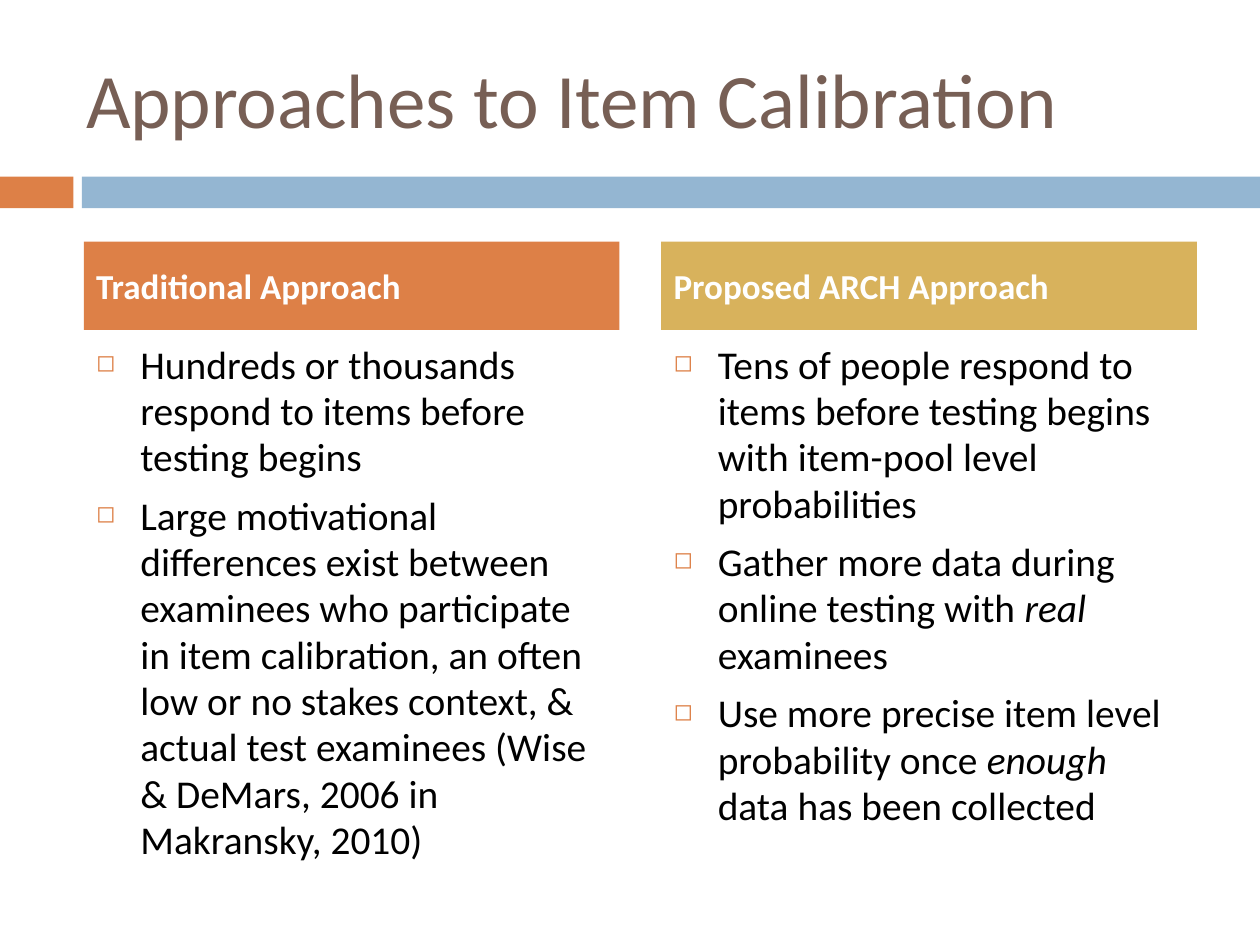
from lxml import etree
from pptx import Presentation
from pptx.dml.color import RGBColor
from pptx.enum.shapes import MSO_SHAPE
from pptx.enum.text import MSO_ANCHOR, MSO_AUTO_SIZE, PP_ALIGN
from pptx.oxml.ns import qn
from pptx.util import Cm, Pt

RECTANGLE = MSO_SHAPE.RECTANGLE
TOP, MIDDLE = MSO_ANCHOR.TOP, MSO_ANCHOR.MIDDLE
LEFT = PP_ALIGN.LEFT
NO_AUTOFIT = MSO_AUTO_SIZE.NONE

ORANGE = RGBColor(0xDD, 0x80, 0x47)
BLUE = RGBColor(0x94, 0xB6, 0xD2)
GOLD = RGBColor(0xD8, 0xB2, 0x5C)
BROWN = RGBColor(0x77, 0x5F, 0x55)
BLACK = RGBColor(0, 0, 0)
WHITE = RGBColor(0xFF, 0xFF, 0xFF)

TITLE_ONLY_LAYOUT = 5
COLUMN_LEFT, COLUMN_STEP, COLUMN_WIDTH = 1.69, 11.64, 10.8

COLUMNS = [
    ("Traditional Approach", ORANGE, [
        ["Hundreds or thousands respond to items before testing begins"],
        ["Large motivational differences exist between examinees who participate "
         "in item calibration, an often low or no stakes context, & actual test "
         "examinees (Wise & DeMars, 2006 in Makransky, 2010)"],
    ]),
    ("Proposed ARCH Approach", GOLD, [
        ["Tens of people respond to items before testing begins with item-pool "
         "level probabilities"],
        ["Gather more data during online testing with ", "real", " examinees"],
        ["Use more precise item level probability once ", "enough",
         " data has been collected"],
    ]),
]


def add_text(paragraph, parts, *, font, size, color, bold=False, space_before=0,
             line_spacing=1.0):
    """Write the parts as runs; every second part is italic."""
    paragraph.alignment = LEFT
    paragraph.space_before = Pt(space_before)
    paragraph.line_spacing = line_spacing
    for index, part in enumerate(parts):
        run = paragraph.add_run()
        run.text = part
        run.font.name = font
        run.font.size = Pt(size)
        run.font.color.rgb = color
        run.font.bold = bold
        run.font.italic = index % 2 == 1


def add_bullet(paragraph, color, indent):
    properties = paragraph._p.get_or_add_pPr()
    properties.set("marL", str(indent))
    properties.set("indent", str(-indent))
    bullet_color = etree.SubElement(properties, qn("a:buClr"))
    etree.SubElement(bullet_color, qn("a:srgbClr"), val=str(color))
    etree.SubElement(properties, qn("a:buSzPct"), val="60000")
    etree.SubElement(properties, qn("a:buChar"), char="◻")


class SlideBuilder:
    """Holds the shared style and the slide being filled."""

    font = "Calibri"
    space_before = 7
    bullet_indent = Cm(0.89)

    def __init__(self, slide):
        self.slide = slide

    def prepare_frame(self, shape, anchor):
        frame = shape.text_frame
        frame.word_wrap = True
        frame.auto_size = NO_AUTOFIT
        frame.vertical_anchor = anchor
        return frame

    def title(self, text, left, top, width, height):
        shape = self.slide.shapes.title
        shape.left, shape.top = Cm(left), Cm(top)
        shape.width, shape.height = Cm(width), Cm(height)
        frame = self.prepare_frame(shape, MIDDLE)
        add_text(frame.paragraphs[0], [text], font=self.font, size=44, color=BROWN)

    def bar(self, color, left, top, width, height):
        shape = self.slide.shapes.add_shape(
            RECTANGLE, Cm(left), Cm(top), Cm(width), Cm(height))
        shape.shadow.inherit = False
        shape.fill.solid()
        shape.fill.fore_color.rgb = color
        shape.line.fill.background()
        return shape

    def heading(self, text, color, left, top, width, height):
        frame = self.prepare_frame(self.bar(color, left, top, width, height), MIDDLE)
        add_text(frame.paragraphs[0], [text], font=self.font, size=20, color=WHITE,
                 bold=True, space_before=self.space_before)

    def bullet_list(self, items, left, top, width, height):
        shape = self.slide.shapes.add_textbox(
            Cm(left), Cm(top), Cm(width), Cm(height))
        frame = self.prepare_frame(shape, TOP)
        for index, parts in enumerate(items):
            paragraph = frame.add_paragraph() if index else frame.paragraphs[0]
            add_text(paragraph, parts, font=self.font, size=22.5, color=BLACK,
                     space_before=self.space_before, line_spacing=0.98)
            add_bullet(paragraph, ORANGE, self.bullet_indent)


def main():
    presentation = Presentation()
    presentation.slide_width, presentation.slide_height = Cm(25.4), Cm(19.05)
    layout = presentation.slide_layouts[TITLE_ONLY_LAYOUT]
    builder = SlideBuilder(presentation.slides.add_slide(layout))

    builder.bar(ORANGE, 0, 3.56, 1.48, 0.64)
    builder.bar(BLUE, 1.65, 3.56, 23.75, 0.64)
    builder.title("Approaches to Item Calibration", 1.48, 0.76, 22.65, 2.41)
    for index, (heading, color, items) in enumerate(COLUMNS):
        left = COLUMN_LEFT + index * COLUMN_STEP
        builder.heading(heading, color, left, 4.87, COLUMN_WIDTH, 1.78)
        builder.bullet_list(items, left, 6.77, COLUMN_WIDTH, 9.96)

    presentation.save("out.pptx")


if __name__ == "__main__":
    main()
